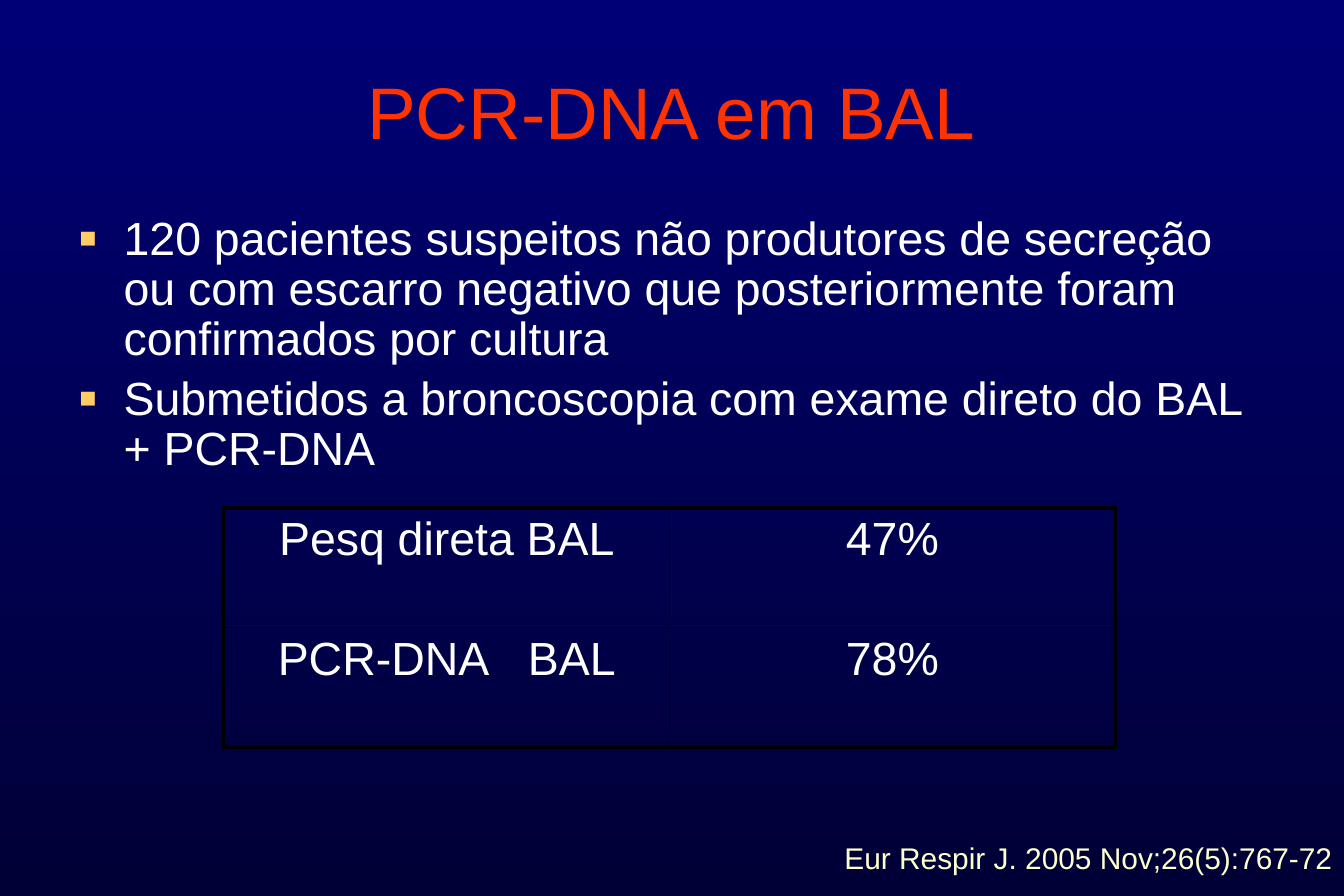
from lxml.etree import SubElement
from pptx import Presentation
from pptx.dml.color import RGBColor
from pptx.enum.text import MSO_ANCHOR, PP_ALIGN
from pptx.oxml.ns import qn
from pptx.util import Cm, Pt

COLOURS = {
    "top": "000076", "bottom": "000036", "title": "FF3300", "text": "FFFFFF",
    "bullet": "FFCC66", "source": "FFFFCC", "border": "000000",
}


class SlideBuilder:
    font_name = "Arial"

    def __init__(self, page):
        self.page = page

    def background(self, top, bottom):
        fill = self.page.background.fill
        fill.gradient()
        fill.gradient_angle = 270
        for stop, colour in zip(fill.gradient_stops, (top, bottom)):
            stop.color.rgb = RGBColor.from_string(COLOURS[colour])

    def add_span(self, para, text, size, colour, **formats):
        for name, value in formats.items():
            setattr(para, name, value)
        span = para.add_run()
        span.text = text
        for name, value in {"name": self.font_name, "size": Pt(size)}.items():
            setattr(span.font, name, value)
        span.font.color.rgb = RGBColor.from_string(COLOURS[colour])
        return span

    def text_box(self, left, top, width, height, anchor=MSO_ANCHOR.TOP):
        box = self.page.shapes.add_textbox(Cm(left), Cm(top), Cm(width), Cm(height))
        frame = box.text_frame
        for name, value in {"word_wrap": True, "vertical_anchor": anchor}.items():
            setattr(frame, name, value)
        return frame

    def bullets(self, frame, items, size, indent):
        for index, item in enumerate(items):
            para = frame.add_paragraph() if index else frame.paragraphs[0]
            properties = para._p.get_or_add_pPr()
            properties.set("marL", str(Cm(indent)))
            properties.set("indent", str(-Cm(indent)))
            colour = SubElement(properties, qn("a:buClr"))
            SubElement(colour, qn("a:srgbClr"), val=COLOURS["bullet"])
            SubElement(properties, qn("a:buSzPct"), val="120000")
            SubElement(properties, qn("a:buFont"), typeface=self.font_name)
            SubElement(properties, qn("a:buChar"), char="▪")
            self.add_span(para, item, size, "text", line_spacing=0.9,
                          space_before=Pt(5.6 if index else 0))

    def borders(self, cell, widths):
        properties = cell._tc.get_or_add_tcPr()
        for position, (side, width) in enumerate(widths.items()):
            line = properties.makeelement(qn(f"a:ln{side}"), {"w": str(Pt(width))})
            fill = SubElement(line, qn("a:solidFill"))
            SubElement(fill, qn("a:srgbClr"), val=COLOURS["border"])
            properties.insert(position, line)

    def table(self, rows, left, top, width, height, size, outer, inner):
        last_row, last_column = len(rows) - 1, len(rows[0]) - 1
        table = self.page.shapes.add_table(
            len(rows), len(rows[0]), Cm(left), Cm(top), Cm(width), Cm(height)).table
        for name in ("first_row", "horz_banding"):
            setattr(table, name, False)
        for r, row in enumerate(rows):
            for c, pieces in enumerate(row):
                cell = table.cell(r, c)
                cell.fill.background()
                for text, spacing in pieces:
                    span = self.add_span(cell.text_frame.paragraphs[0], text, size,
                                         "text", alignment=PP_ALIGN.CENTER)
                    if spacing:
                        span.font._element.set("spc", str(spacing))
                edges = {"L": c == 0, "R": c == last_column,
                         "T": r == 0, "B": r == last_row}
                self.borders(cell, {side: outer if edge else inner
                                    for side, edge in edges.items()})


def main():
    deck = Presentation()
    deck.slide_width, deck.slide_height = Cm(28.575), Cm(19.05)
    slide = SlideBuilder(deck.slides.add_slide(deck.slide_layouts[6]))
    slide.background("top", "bottom")

    source = slide.text_box(0, 17.73, 28.58, 1.32)
    slide.add_span(source.paragraphs[0], "Eur Respir J. 2005 Nov;26(5):767-72",
                   18, "source", alignment=PP_ALIGN.RIGHT)

    title = slide.text_box(1.43, 0.76, 25.7, 3.18, MSO_ANCHOR.MIDDLE)
    slide.add_span(title.paragraphs[0], "PCR-DNA em BAL", 44, "title",
                   alignment=PP_ALIGN.CENTER)

    body = slide.text_box(1.43, 4.45, 25.7, 5.92)
    slide.bullets(body, [
        "120 pacientes suspeitos não produtores de secreção ou com escarro "
        "negativo que posteriormente foram confirmados por cultura",
        "Submetidos a broncoscopia com exame direto do BAL + PCR-DNA",
    ], 28, 0.95)

    slide.table([
        [[("Pesq direta BAL", 0)], [("47%", 0)]],
        [[("PCR-DNA", 0), (" ", 1560), ("BAL", 0)], [("78%", 0)]],
    ], 4.76, 10.8, 18.95, 5.08, 28, 2.25, 1)

    deck.save("out.pptx")


if __name__ == "__main__":
    main()
